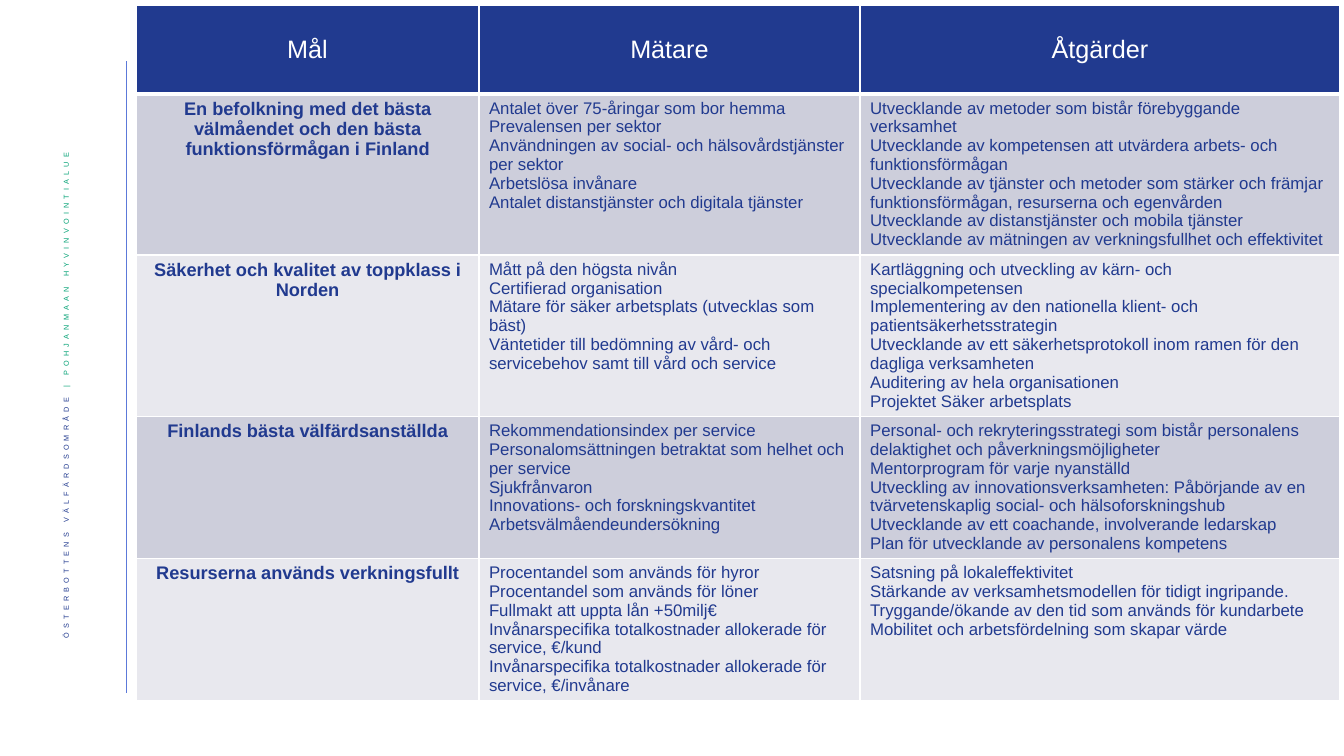
"""Build the strategy table slide: goals, measures and actions."""
from lxml.etree import SubElement
from pptx import Presentation
from pptx.dml.color import RGBColor
from pptx.enum.shapes import MSO_CONNECTOR
from pptx.enum.text import MSO_ANCHOR, PP_ALIGN
from pptx.oxml.ns import qn
from pptx.util import Inches, Pt

HEADERS = ["Mål", "Mätare", "Åtgärder"]
GOALS = [
    ("En befolkning med det bästa välmåendet och den bästa funktionsförmågan i Finland",
     ["Antalet över 75-åringar som bor hemma",
      "Prevalensen per sektor",
      "Användningen av social- och hälsovårdstjänster per sektor",
      "Arbetslösa invånare",
      "Antalet distanstjänster och digitala tjänster"],
     ["Utvecklande av metoder som bistår förebyggande verksamhet",
      "Utvecklande av kompetensen att utvärdera arbets- och funktionsförmågan",
      "Utvecklande av tjänster och metoder som stärker och främjar "
      "funktionsförmågan, resurserna och egenvården",
      "Utvecklande av distanstjänster och mobila tjänster",
      "Utvecklande av mätningen av verkningsfullhet och effektivitet"]),
    ("Säkerhet och kvalitet av toppklass i Norden",
     ["Mått på den högsta nivån",
      "Certifierad organisation",
      "Mätare för säker arbetsplats (utvecklas som bäst)",
      "Väntetider till bedömning av vård- och servicebehov samt till vård och service"],
     ["Kartläggning och utveckling av kärn- och specialkompetensen",
      "Implementering av den nationella klient- och patientsäkerhetsstrategin",
      "Utvecklande av ett säkerhetsprotokoll inom ramen för den dagliga verksamheten",
      "Auditering av hela organisationen",
      "Projektet Säker arbetsplats"]),
    ("Finlands bästa välfärdsanställda",
     ["Rekommendationsindex per service",
      "Personalomsättningen betraktat som helhet och per service",
      "Sjukfrånvaron",
      "Innovations- och forskningskvantitet",
      "Arbetsvälmåendeundersökning"],
     ["Personal- och rekryteringsstrategi som bistår personalens delaktighet "
      "och påverkningsmöjligheter",
      "Mentorprogram för varje nyanställd",
      "Utveckling av innovationsverksamheten: Påbörjande av en tvärvetenskaplig "
      "social- och hälsoforskningshub",
      "Utvecklande av ett coachande, involverande ledarskap",
      "Plan för utvecklande av personalens kompetens"]),
    ("Resurserna används verkningsfullt",
     ["Procentandel som används för hyror",
      "Procentandel som används för löner",
      "Fullmakt att uppta lån +50milj€",
      "Invånarspecifika totalkostnader allokerade för service, €/kund",
      "Invånarspecifika totalkostnader allokerade för service, €/invånare"],
     ["Satsning på lokaleffektivitet",
      "Stärkande av verksamhetsmodellen för tidigt ingripande. "
      "Tryggande/ökande av den tid som används för kundarbete",
      "Mobilitet och arbetsfördelning som skapar värde"]),
]
SIDE_LABEL = [("ÖSTERBOTTENS VÄLFÄRDSOMRÅDE ", "navy"),
              ("| POHJANMAAN HYVINVOINTIALUE", "green")]
THEME = {
    "font": "Arial",
    "colours": {"navy": "213A8F", "green": "00A174", "rule": "5C79D9", "white": "FFFFFF",
                "dark_band": "CDCEDB", "light_band": "E8E8EE"},
    "formats": {"header": {"size": Pt(18), "bold": False},
                "goal": {"size": Pt(13), "bold": True},
                "item": {"size": Pt(12), "bold": False},
                "side": {"size": Pt(9), "bold": False}},
}
SLIDE_SIZE = (13.33, 7.5)
TABLE_ORIGIN = (1.35, 0.05)
COLUMNS = [3.4, 3.78, 4.76]
ROWS = [0.88, 1.6, 1.6, 1.41, 1.41]
RULE = (1.25, 0.61, 1.25, 6.88)
SIDE_BOX = (0.42, 1.42, 0.52, 5.73)


def colour(name):
    return RGBColor.from_string(THEME["colours"][name])


def add_run(p, text, style, tint):
    r = p.add_run()
    r.text = text
    r.font.name = THEME["font"]
    r.font.color.rgb = colour(tint)
    for key, value in THEME["formats"][style].items():
        setattr(r.font, key, value)
    return r


def add_borders(cell, bottom):
    tc_pr = cell._tc.get_or_add_tcPr()
    for side, width in (("L", 1), ("R", 1), ("T", 1), ("B", bottom)):
        ln = SubElement(tc_pr, qn(f"a:ln{side}"), w=str(Pt(width)))
        fill = SubElement(ln, qn("a:solidFill"))
        SubElement(fill, qn("a:srgbClr"), val=THEME["colours"]["white"])


def fill_cell(cell, lines, style, tint, band):
    header = style == "header"
    add_borders(cell, 3 if header else 1)
    cell.fill.solid()
    cell.fill.fore_color.rgb = colour(band)
    cell.vertical_anchor = MSO_ANCHOR.MIDDLE if header else MSO_ANCHOR.TOP
    tf = cell.text_frame
    for i, line in enumerate(lines):
        p = tf.add_paragraph() if i else tf.paragraphs[0]
        p.alignment = PP_ALIGN.LEFT if style == "item" else PP_ALIGN.CENTER
        add_run(p, line, style, tint)


def add_goal_table(s):
    size = (sum(COLUMNS), sum(ROWS))
    table = s.shapes.add_table(len(ROWS), len(COLUMNS),
                               *map(Inches, TABLE_ORIGIN + size)).table
    for column, width in zip(table.columns, COLUMNS):
        column.width = Inches(width)
    for row, height in zip(table.rows, ROWS):
        row.height = Inches(height)
    for j, text in enumerate(HEADERS):
        fill_cell(table.cell(0, j), [text], "header", "white", "navy")
    for i, (goal, measures, actions) in enumerate(GOALS, 1):
        band = "dark_band" if i % 2 else "light_band"
        for j, lines in enumerate(([goal], measures, actions)):
            fill_cell(table.cell(i, j), lines, "item" if j else "goal", "navy", band)


def add_side_rule(s):
    line = s.shapes.add_connector(MSO_CONNECTOR.STRAIGHT, *map(Inches, RULE))
    line.line.color.rgb = colour("rule")
    line.line.width = Pt(0.5)
    SubElement(line._element.spPr, qn("a:effectLst"))


def add_side_label(s):
    tf = s.shapes.add_textbox(*map(Inches, SIDE_BOX)).text_frame
    tf.word_wrap = True
    tf.vertical_anchor = MSO_ANCHOR.MIDDLE
    tf._txBody.bodyPr.set("vert", "vert270")
    p = tf.paragraphs[0]
    p.alignment = PP_ALIGN.RIGHT
    p.line_spacing = 0.9
    for text, tint in SIDE_LABEL:
        r_pr = add_run(p, text, "side", tint)._r.get_or_add_rPr()
        r_pr.set("baseline", "30000")
        r_pr.set("spc", "300")


def main():
    prs = Presentation()
    prs.slide_width, prs.slide_height = map(Inches, SLIDE_SIZE)
    s = prs.slides.add_slide(prs.slide_layouts[6])
    add_side_rule(s)
    add_side_label(s)
    add_goal_table(s)
    prs.save("out.pptx")


if __name__ == "__main__":
    main()
